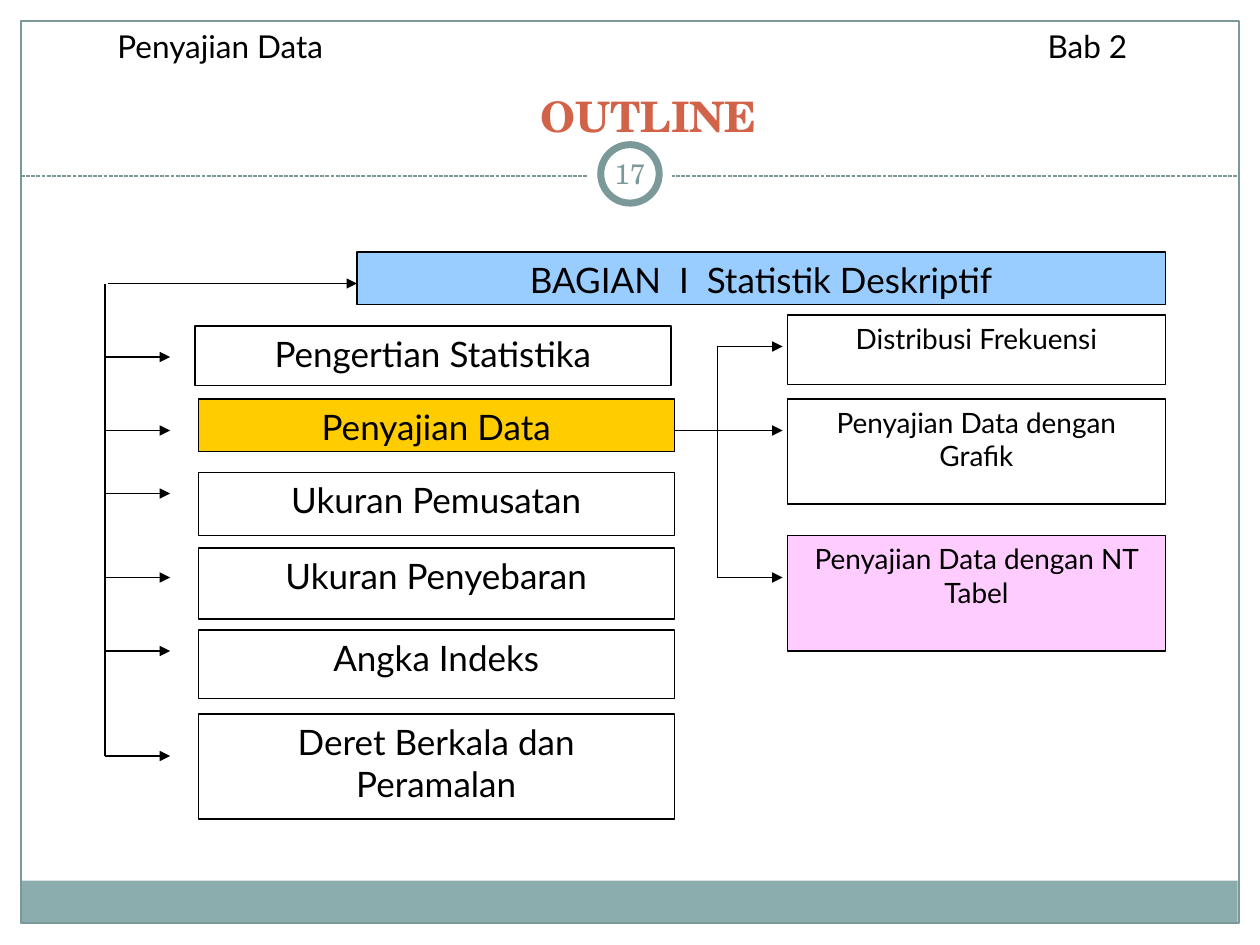
from lxml import etree
from pptx import Presentation
from pptx.dml.color import RGBColor
from pptx.enum.dml import MSO_LINE
from pptx.enum.shapes import MSO_CONNECTOR, MSO_SHAPE
from pptx.enum.text import MSO_ANCHOR, PP_ALIGN
from pptx.oxml.ns import qn
from pptx.util import Pt

BLACK = RGBColor(0x00, 0x00, 0x00)
WHITE = RGBColor(0xFF, 0xFF, 0xFF)
TEAL = RGBColor(0x7C, 0x99, 0x9A)
BAND = RGBColor(0x8C, 0xAD, 0xAE)
RUST = RGBColor(0xD1, 0x63, 0x49)
BLUE = RGBColor(0x99, 0xCC, 0xFF)
GOLD = RGBColor(0xFF, 0xCC, 0x00)
PINK = RGBColor(0xFF, 0xCC, 0xFF)
BODY, SERIF = "Lato", "TeX Gyre Schola"

HEADER = "Penyajian Data\tBab 2"
TITLE = "OUTLINE"
PAGE = "17"
PART = "BAGIAN  I  Statistik Deskriptif"
# text, left, top, height, fill
CHAPTERS = [
    ("Pengertian Statistika", 111.4, 186.3, 34, WHITE),
    ("Penyajian Data", 113.3, 228, 30, GOLD),
    ("Ukuran Pemusatan", 113.3, 270, 36, WHITE),
    ("Ukuran Penyebaran", 113.3, 313.2, 40.5, WHITE),
    ("Angka Indeks", 113.3, 360, 39, WHITE),
    ("Deret Berkala dan\nPeramalan", 113.3, 408, 60, WHITE),
]
# text, top, height, fill
TOPICS = [
    ("Distribusi Frekuensi", 180, 39.6, WHITE),
    ("Penyajian Data dengan Grafik", 228, 60, WHITE),
    ("Penyajian Data dengan NT Tabel", 306, 66, PINK),
]
CHAPTER_W, TOPIC_X, TOPIC_W = 272, 450, 216
TRUNK_X, BRANCH_X, STUB = 60, 410, 37.2
PART_Y = 162
CHAPTER_YS = [204, 246, 282, 330, 372, 432]
TOPIC_YS = [198, 246, 330]

prs = Presentation()
prs.slide_width, prs.slide_height = Pt(720), Pt(540)
s = prs.slides.add_slide(prs.slide_layouts[6])


def write(shape, text, size, font=BODY, color=BLACK, bold=False,
          align=PP_ALIGN.CENTER, anchor=MSO_ANCHOR.TOP):
    tf = shape.text_frame
    tf.text = text
    tf.word_wrap = True
    tf.vertical_anchor = anchor
    formats = {"name": font, "size": Pt(size), "bold": bold}
    for p in tf.paragraphs:
        p.alignment = align
        for r in p.runs:
            for name, value in formats.items():
                setattr(r.font, name, value)
            r.font.color.rgb = color
    return tf


def add_text(x, y, w, h, text, size, **style):
    return write(s.shapes.add_textbox(Pt(x), Pt(y), Pt(w), Pt(h)), text, size, **style)


def set_line(line, color, width):
    line.color.rgb = color
    line.width = Pt(width)


def add_shape(kind, x, y, w, h, fill=None, line=None, width=0.75):
    sp = s.shapes.add_shape(kind, Pt(x), Pt(y), Pt(w), Pt(h))
    sp.shadow.inherit = False
    if fill is None:
        sp.fill.background()
    else:
        sp.fill.solid()
        sp.fill.fore_color.rgb = fill
    if line is None:
        sp.line.fill.background()
    else:
        set_line(sp.line, line, width)
    return sp


def add_box(x, y, w, h, text, size, fill):
    write(add_shape(MSO_SHAPE.RECTANGLE, x, y, w, h, fill, BLACK), text, size)


def add_arrowhead(line):
    etree.SubElement(line._get_or_add_ln(), qn("a:tailEnd"), type="triangle")


def add_line(x1, y1, x2, y2, color=BLACK, arrow=False):
    c = s.shapes.add_connector(MSO_CONNECTOR.STRAIGHT, Pt(x1), Pt(y1), Pt(x2), Pt(y2))
    set_line(c.line, color, 0.75)
    if arrow:
        add_arrowhead(c.line)
    etree.SubElement(c._element.spPr, qn("a:effectLst"))
    return c


# Frame, divider and page number
add_shape(MSO_SHAPE.RECTANGLE, 11.7, 503.2, 695.6, 24.5, BAND)
add_shape(MSO_SHAPE.RECTANGLE, 12, 12, 696, 515.5, line=TEAL)
add_line(12, 100.6, 708, 100.6, TEAL).line.dash_style = MSO_LINE.SQUARE_DOT
add_shape(MSO_SHAPE.OVAL, 336, 75.4, 48, 48, WHITE)
add_shape(MSO_SHAPE.OVAL, 343.3, 82.7, 33.4, 33.4, WHITE, TEAL, 4)
number = add_text(342, 81.6, 36, 34.7, PAGE, 16, font=SERIF, color=TEAL,
                  anchor=MSO_ANCHOR.MIDDLE)
for side in ("left", "top", "right", "bottom"):
    setattr(number, f"margin_{side}", Pt(3.6))
add_text(64, 48, 613.4, 36, TITLE, 24, font=SERIF, color=RUST, bold=True,
         anchor=MSO_ANCHOR.BOTTOM)

# Boxes
add_box(204, 144, 462, 30, PART, 20, BLUE)
for text, x, y, h, fill in CHAPTERS:
    add_box(x, y, CHAPTER_W, h, text, 20, fill)
for text, y, h, fill in TOPICS:
    add_box(TOPIC_X, y, TOPIC_W, h, text, 16, fill)

# Tree from the part to its chapters
add_line(TRUNK_X, PART_Y, TRUNK_X, CHAPTER_YS[-1])
add_line(TRUNK_X + 2, PART_Y, 204, PART_Y, arrow=True)
for y in CHAPTER_YS:
    add_line(TRUNK_X, y, TRUNK_X + STUB, y, arrow=True)

# Tree from the current chapter to its topics
first, middle, last = TOPIC_YS
builder = s.shapes.build_freeform(Pt(385.3), Pt(middle))
builder.add_line_segments(
    [(Pt(BRANCH_X), Pt(middle)), (Pt(BRANCH_X), Pt(first)),
     (Pt(BRANCH_X + STUB), Pt(first))], close=False)
elbow = builder.convert_to_shape()
elbow.shadow.inherit = False
elbow.fill.background()
set_line(elbow.line, BLACK, 0.75)
add_arrowhead(elbow.line)
add_line(BRANCH_X, middle, BRANCH_X, last)
for y in (middle, last):
    add_line(BRANCH_X, y, BRANCH_X + STUB, y, arrow=True)

# Running header, with the chapter number on a tab stop
header = add_text(60, 12, 600, 29, HEADER, 18, align=PP_ALIGN.LEFT)
tabs = etree.SubElement(header.paragraphs[0]._p.get_or_add_pPr(), qn("a:tabLst"))
etree.SubElement(tabs, qn("a:tab"), pos=str(Pt(531.5)), algn="l")

prs.save("out.pptx")
